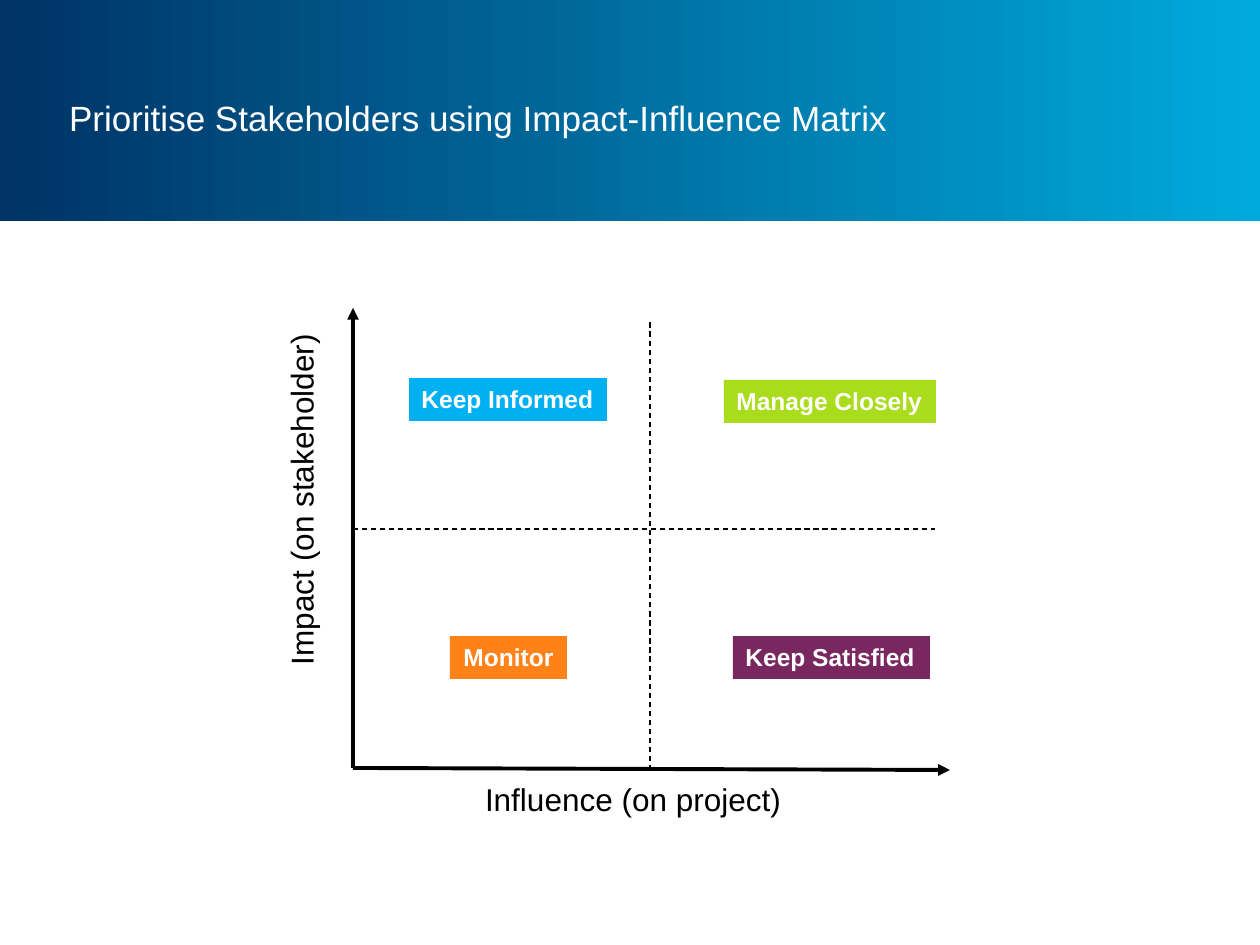
from dataclasses import dataclass

from lxml.etree import SubElement
from pptx import Presentation
from pptx.dml.color import RGBColor
from pptx.enum.dml import MSO_LINE
from pptx.enum.shapes import MSO_CONNECTOR, MSO_SHAPE
from pptx.enum.text import MSO_ANCHOR, MSO_AUTO_SIZE, PP_ALIGN
from pptx.oxml.ns import qn
from pptx.util import Emu, Pt

PX_PER_INCH = 126


@dataclass(frozen=True)
class Theme:
    font: str = "Arial"
    title_size: int = 20
    axis_size: int = 18
    label_size: int = 14
    navy: str = "003366"
    cyan: str = "00AADC"
    black: str = "000000"
    white: str = "FFFFFF"
    green: str = "AADC1E"
    purple: str = "78285F"
    orange: str = "FF8219"
    blue: str = "00B0F0"


@dataclass(frozen=True)
class Box:
    left: int
    top: int
    width: int
    height: int

    def emu(self) -> list[Emu]:
        return [px(v) for v in (self.left, self.top, self.width, self.height)]


@dataclass(frozen=True)
class Line:
    start: tuple[int, int]
    end: tuple[int, int]
    is_axis: bool = False


@dataclass(frozen=True)
class AxisTitle:
    text: str
    box: Box
    rotation: int = 0


@dataclass(frozen=True)
class Quadrant:
    text: str
    box: Box
    color: str
    align: PP_ALIGN = PP_ALIGN.LEFT


THEME = Theme()
ORIGIN = (353, 768)

LINES = [
    Line(ORIGIN, (950, 770), is_axis=True),
    Line(ORIGIN, (353, 308), is_axis=True),
    Line((353, 529), (935, 529)),
    Line((650, 770), (650, 319)),
]
AXIS_TITLES = [
    AxisTitle("Influence (on project)", Box(485, 780, 334, 38)),
    AxisTitle("Impact (on stakeholder)", Box(134, 479, 334, 38), 270),
]
QUADRANTS = [
    Quadrant("Manage Closely", Box(724, 380, 212, 43), THEME.green),
    Quadrant("Keep Satisfied", Box(733, 636, 197, 43), THEME.purple),
    Quadrant("Monitor", Box(450, 636, 117, 43), THEME.orange, PP_ALIGN.CENTER),
    Quadrant("Keep Informed", Box(409, 378, 198, 43), THEME.blue),
]


def px(value: int) -> Emu:
    return Emu(round(value * 914400 / PX_PER_INCH))


def rgb(color: str) -> RGBColor:
    return RGBColor.from_string(color)


def set_insets(tf, inset: int) -> None:
    tf.margin_left = tf.margin_top = tf.margin_right = tf.margin_bottom = px(inset)


def write(tf, text: str, size: int, color: str, bold: bool = False,
          align: PP_ALIGN = PP_ALIGN.LEFT) -> None:
    p = tf.paragraphs[0]
    p.text = text
    p.alignment = align
    p.font.name = THEME.font
    p.font.size = Pt(size)
    p.font.bold = bold
    p.font.color.rgb = rgb(color)


def add_rectangle(slide, box: Box):
    sp = slide.shapes.add_shape(MSO_SHAPE.RECTANGLE, *box.emu())
    sp.shadow.inherit = False
    sp.line.fill.background()
    return sp


def add_header(slide, text: str) -> None:
    """Place the title on a gradient band that lies behind it."""
    band = add_rectangle(slide, Box(0, 0, 1260, 221))
    band.fill.gradient()
    band.fill.gradient_angle = 0
    for stop, color in zip(band.fill.gradient_stops, (THEME.navy, THEME.cyan)):
        stop.color.rgb = rgb(color)
    title = slide.shapes.title
    title._element.addprevious(band._element)
    title.left, title.top, title.width, title.height = Box(64, 38, 942, 159).emu()
    tf = title.text_frame
    tf.word_wrap = True
    tf.vertical_anchor = MSO_ANCHOR.MIDDLE
    set_insets(tf, 5)
    write(tf, text, THEME.title_size, THEME.white)


def add_line(slide, line: Line) -> None:
    """Draw an axis with an arrowhead, or a thin dashed divider."""
    ends = [px(v) for v in line.start + line.end]
    cxn = slide.shapes.add_connector(MSO_CONNECTOR.STRAIGHT, *ends)
    cxn.line.color.rgb = rgb(THEME.black)
    cxn.line.width = Pt(2.25 if line.is_axis else 0.75)
    if line.is_axis:
        SubElement(cxn.line._get_or_add_ln(), qn("a:tailEnd"), type="triangle")
    else:
        cxn.line.dash_style = MSO_LINE.DASH
    SubElement(cxn._element.spPr, qn("a:effectLst"))


def add_axis_title(slide, axis_title: AxisTitle) -> None:
    sp = slide.shapes.add_textbox(*axis_title.box.emu())
    sp.rotation = axis_title.rotation
    tf = sp.text_frame
    tf.word_wrap = True
    tf.auto_size = MSO_AUTO_SIZE.SHAPE_TO_FIT_TEXT
    set_insets(tf, 0)
    write(tf, axis_title.text, THEME.axis_size, THEME.black)


def add_quadrant(slide, quadrant: Quadrant) -> None:
    sp = add_rectangle(slide, quadrant.box)
    sp.fill.solid()
    sp.fill.fore_color.rgb = rgb(quadrant.color)
    tf = sp.text_frame
    tf.word_wrap = False
    tf.auto_size = MSO_AUTO_SIZE.SHAPE_TO_FIT_TEXT
    tf.vertical_anchor = MSO_ANCHOR.TOP
    write(tf, quadrant.text, THEME.label_size, THEME.white, True, quadrant.align)


def main() -> None:
    prs = Presentation()
    prs.slide_width, prs.slide_height = px(1260), px(945)
    slide = prs.slides.add_slide(prs.slide_layouts[5])
    add_header(slide, "Prioritise Stakeholders using Impact-Influence Matrix")
    for line in LINES:
        add_line(slide, line)
    for axis_title in AXIS_TITLES:
        add_axis_title(slide, axis_title)
    for quadrant in QUADRANTS:
        add_quadrant(slide, quadrant)
    prs.save("out.pptx")


if __name__ == "__main__":
    main()
